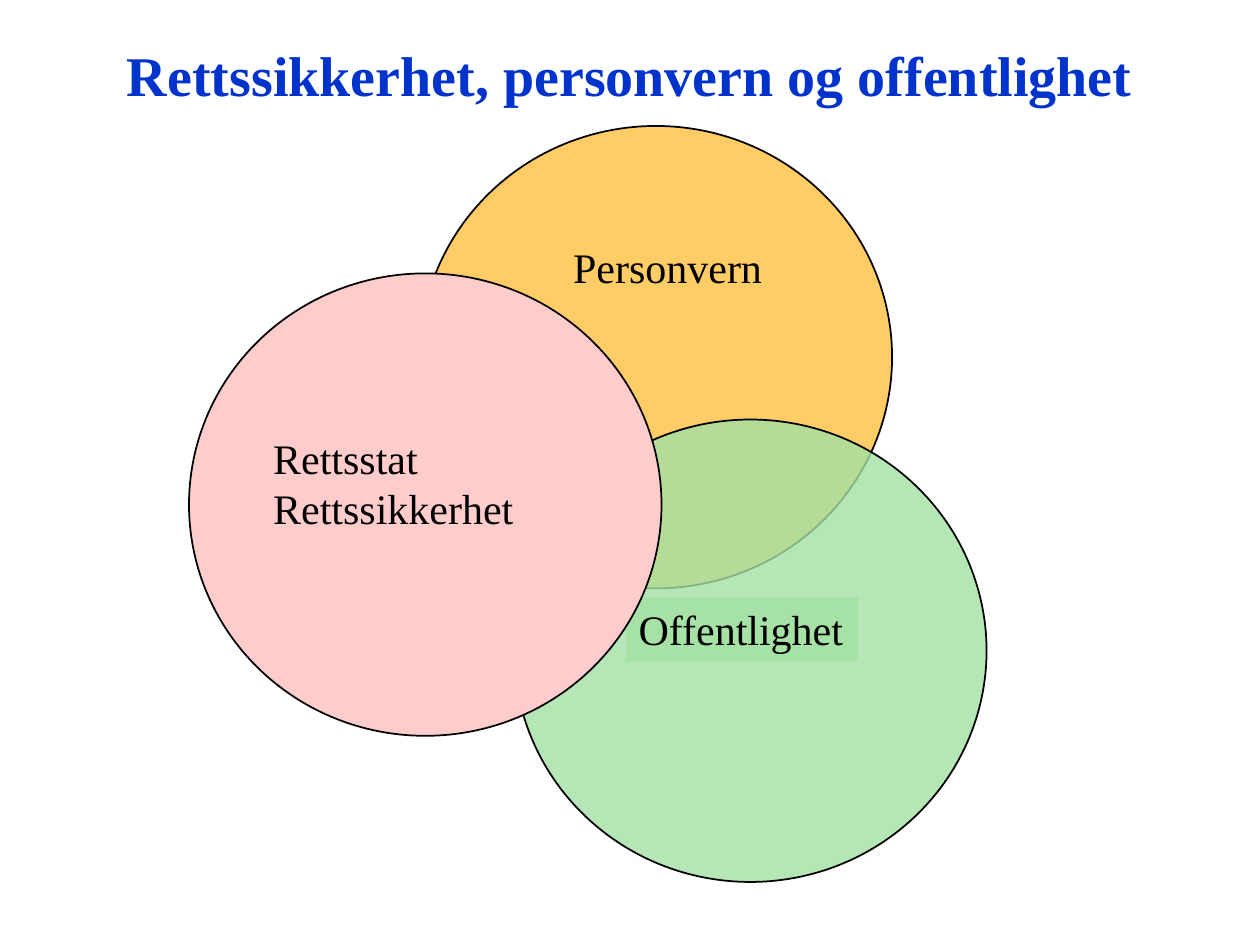
"""Build a slide with three overlapping circles for legal values."""
from dataclasses import dataclass

from lxml.etree import SubElement
from pptx import Presentation
from pptx.dml.color import RGBColor
from pptx.enum.shapes import MSO_SHAPE
from pptx.enum.text import MSO_ANCHOR, MSO_AUTO_SIZE, PP_ALIGN
from pptx.oxml.ns import qn
from pptx.shapes.autoshape import Shape
from pptx.slide import Slide
from pptx.text.text import TextFrame
from pptx.util import Inches, Pt

BLACK = RGBColor(0x00, 0x00, 0x00)
BLUE = RGBColor(0x00, 0x33, 0xCC)
ORANGE = RGBColor(0xFF, 0xCC, 0x66)
GREEN = RGBColor(0xA3, 0xE0, 0xA3)
PINK = RGBColor(0xFF, 0xCC, 0xCC)
FONT = "Times New Roman"
CIRCLE_WIDTH, CIRCLE_HEIGHT = 3.75, 3.67


@dataclass(frozen=True)
class Value:
    label: str
    color: RGBColor
    circle_at: tuple[float, float]
    label_box: tuple[float, float, float, float]
    circle_opacity: int = 100
    label_opacity: int = 100


PERSONVERN = Value("Personvern", ORANGE, (3.33, 1), (4.45, 1.87, 1.72, 0.51))
OFFENTLIGHET = Value("Offentlighet", GREEN, (4.08, 3.33), (4.97, 4.74, 1.84, 0.51), 80, 80)
RETTSSTAT = Value("Rettsstat\nRettssikkerhet", PINK, (1.5, 2.17), (2.07, 3.38, 2.12, 0.91),
                  label_opacity=80)


def fill_shape(shape: Shape, color: RGBColor, opacity: int) -> None:
    shape.shadow.inherit = False
    shape.fill.solid()
    shape.fill.fore_color.rgb = color
    if opacity < 100:
        color_element = shape.fill._xPr.find(qn("a:solidFill"))[0]
        SubElement(color_element, qn("a:alpha"), val=str(opacity * 1000))


def write_text(frame: TextFrame, text: str, size: int, color: RGBColor,
               align: PP_ALIGN, bold: bool = False) -> None:
    frame.text = text
    for paragraph in frame.paragraphs:
        paragraph.alignment = align
        for run in paragraph.runs:
            run.font.name = FONT
            run.font.size = Pt(size)
            run.font.bold = bold
            run.font.color.rgb = color


def draw_title(slide: Slide, text: str) -> None:
    title = slide.shapes.add_textbox(Inches(0.75), Inches(0.25), Inches(8.5), Inches(0.67))
    title.text_frame.word_wrap = True
    title.text_frame.vertical_anchor = MSO_ANCHOR.MIDDLE
    write_text(title.text_frame, text, 32, BLUE, PP_ALIGN.CENTER, bold=True)


def draw_value(slide: Slide, value: Value) -> None:
    group = slide.shapes.add_group_shape()
    left, top = value.circle_at
    circle = group.shapes.add_shape(MSO_SHAPE.OVAL, Inches(left), Inches(top),
                                    Inches(CIRCLE_WIDTH), Inches(CIRCLE_HEIGHT))
    fill_shape(circle, value.color, value.circle_opacity)
    circle.line.color.rgb = BLACK
    circle.line.width = Pt(1)

    label = group.shapes.add_shape(MSO_SHAPE.RECTANGLE, *map(Inches, value.label_box))
    fill_shape(label, value.color, value.label_opacity)
    label.line.fill.background()
    frame = label.text_frame
    frame.word_wrap = False
    frame.auto_size = MSO_AUTO_SIZE.SHAPE_TO_FIT_TEXT
    frame.vertical_anchor = MSO_ANCHOR.TOP
    write_text(frame, value.label, 24, BLACK, PP_ALIGN.LEFT)


def main() -> None:
    presentation = Presentation()
    presentation.slide_width = Inches(10)
    presentation.slide_height = Inches(7.5)
    slide = presentation.slides.add_slide(presentation.slide_layouts[6])
    draw_value(slide, PERSONVERN)
    draw_value(slide, OFFENTLIGHET)
    draw_title(slide, "Rettssikkerhet, personvern og offentlighet")
    draw_value(slide, RETTSSTAT)
    presentation.save("out.pptx")


if __name__ == "__main__":
    main()
